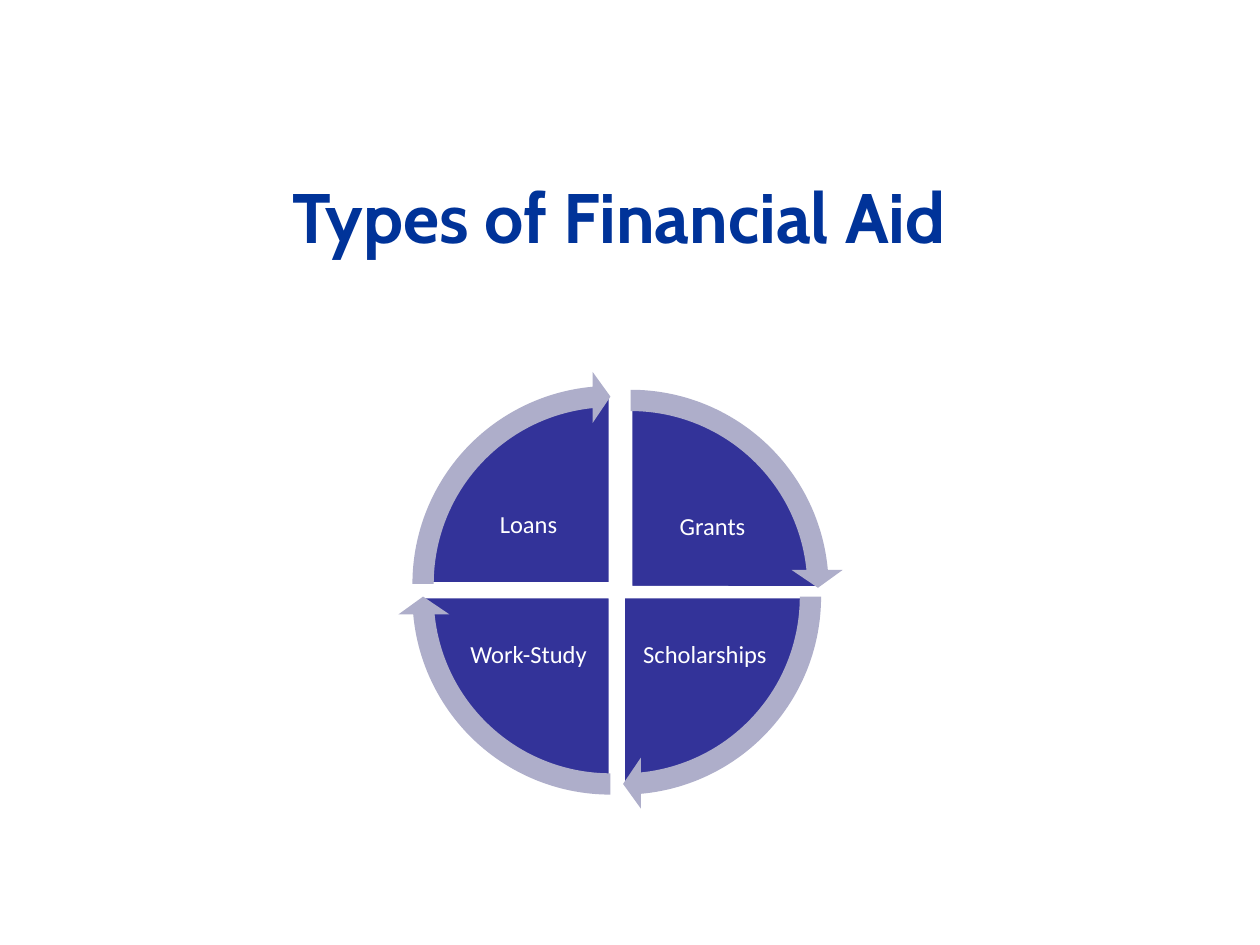
from pptx import Presentation
from pptx.dml.color import RGBColor
from pptx.enum.shapes import MSO_SHAPE
from pptx.enum.text import MSO_ANCHOR, PP_ALIGN
from pptx.util import Inches, Pt

COLORS = {"title": "003399", "pie": "333399", "arrow": "AEAECA", "white": "FFFFFF"}
PIE_SIZE, ARROW_SIZE = 3.01, 3.38
LABEL_W, LABEL_H = 1.11, 0.82
QUARTER = 54  # 90 degrees in adjustment units

# label, pie left and top, label left and top, start angle in quarters
QUADRANTS = [
    ("Grants", 3.5, 3.16, 5.1, 3.78, 3),
    ("Scholarships", 3.44, 3.23, 5.04, 4.79, 0),
    ("Work-Study", 3.34, 3.23, 3.64, 4.79, 1),
    ("Loans", 3.34, 3.13, 3.64, 3.76, 2),
]


def add_filled(shapes, kind, x, y, w, h, color):
    sp = shapes.add_shape(kind, Inches(x), Inches(y), Inches(w), Inches(h))
    sp.shadow.inherit = False
    sp.fill.solid()
    sp.fill.fore_color.rgb = RGBColor.from_string(COLORS[color])
    sp.line.fill.background()
    return sp


def set_text(tf, text, font, size, color):
    tf.word_wrap = True
    tf.text = text
    p = tf.paragraphs[0]
    p.alignment = PP_ALIGN.CENTER
    r = p.runs[0]
    r.font.name = font
    r.font.size = Pt(size)
    r.font.color.rgb = RGBColor.from_string(COLORS[color])
    return p


prs = Presentation()
prs.slide_width, prs.slide_height = Inches(10), Inches(7.5)
s = prs.slides.add_slide(prs.slide_layouts[6])
cycle = s.shapes.add_group_shape()

# Pie quarters with their labels
for label, x, y, label_x, label_y, start in QUADRANTS:
    sp = add_filled(cycle.shapes, MSO_SHAPE.PIE, x, y, PIE_SIZE, PIE_SIZE, "pie")
    sp.adjustments[0] = start * QUARTER
    sp.adjustments[1] = (start + 1) % 4 * QUARTER
    sp.line.color.rgb = RGBColor.from_string(COLORS["white"])
    sp.line.width = Pt(2)

    box = cycle.shapes.add_textbox(Inches(label_x), Inches(label_y),
                                   Inches(LABEL_W), Inches(LABEL_H))
    tf = box.text_frame
    tf.vertical_anchor = MSO_ANCHOR.MIDDLE
    tf.margin_left = tf.margin_right = Inches(0.02)
    tf.margin_top = tf.margin_bottom = Inches(0.02)
    p = set_text(tf, label, "Calibri", 14, "white")
    p.line_spacing = 0.9

# Arrows centred on the pie quarters
inset = (ARROW_SIZE - PIE_SIZE) / 2
for label, x, y, label_x, label_y, start in QUADRANTS:
    sp = add_filled(cycle.shapes, MSO_SHAPE.CIRCULAR_ARROW, x - inset, y - inset,
                    ARROW_SIZE, ARROW_SIZE, "arrow")
    end = (start + 1) * QUARTER - 3.28
    for i, value in enumerate([0.05, 3.28, end, start * QUARTER, 0.06]):
        sp.adjustments[i] = value

# Title
title = add_filled(s.shapes, MSO_SHAPE.RECTANGLE, 0.83, 1.33, 8.17, 1, "white")
title.text_frame.vertical_anchor = MSO_ANCHOR.TOP
p = set_text(title.text_frame, "Types of Financial Aid", "Cabin", 40, "title")
p.runs[0].font.bold = True

prs.save("out.pptx")
